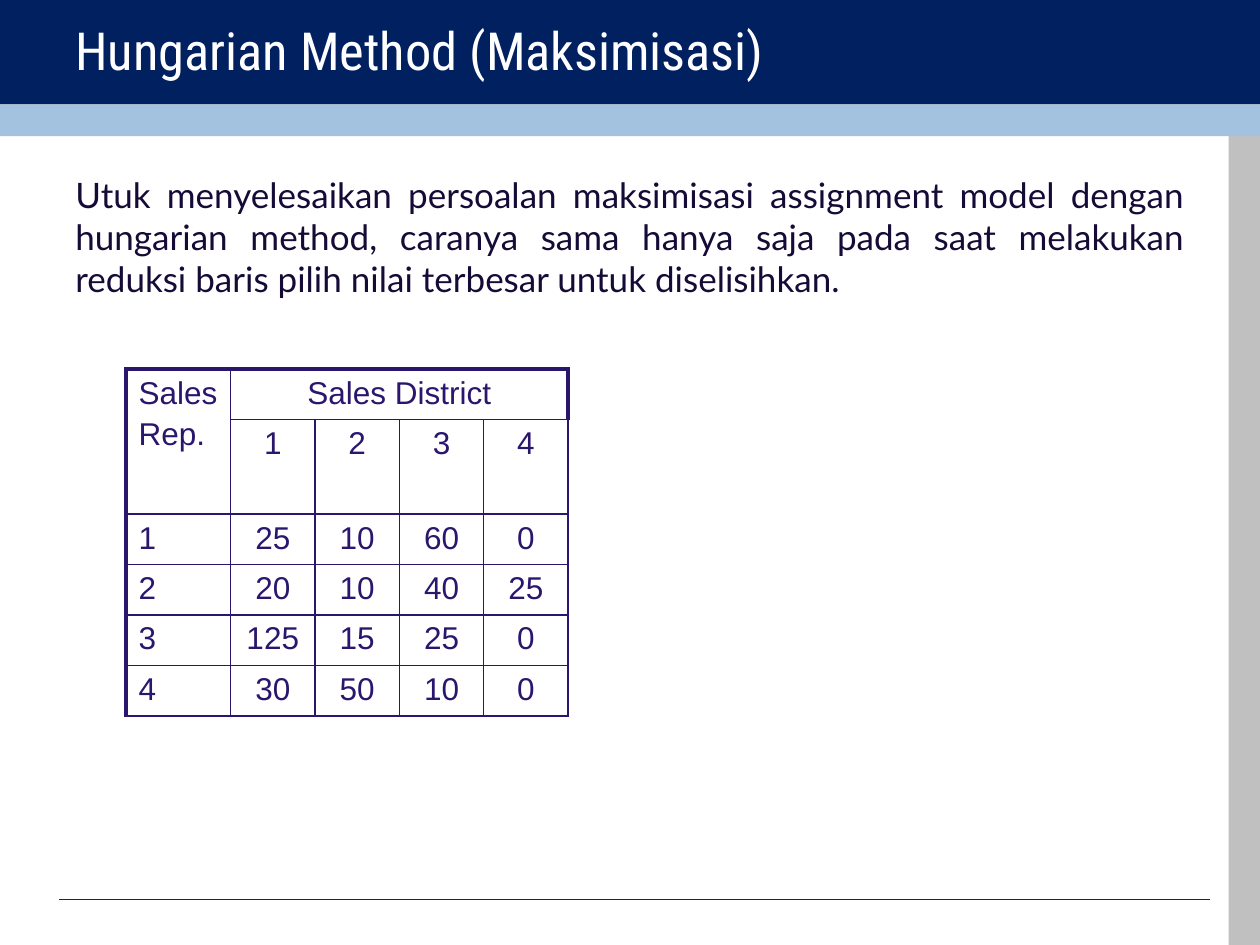
from dataclasses import dataclass

import pptx
import pptx.dml.color
import pptx.enum.shapes
import pptx.enum.text
import pptx.oxml.ns
import pptx.util
from lxml import etree

Inches, Pt = pptx.util.Inches, pptx.util.Pt
RGB = pptx.dml.color.RGBColor.from_string
Align = pptx.enum.text.PP_ALIGN
Anchor = pptx.enum.text.MSO_ANCHOR
qn = pptx.oxml.ns.qn

W, H = Inches(10), Inches(7.5)


@dataclass(frozen=True)
class Theme:
    navy: str = "002060"
    sky: str = "A3C2E0"
    gray: str = "C0C0C0"
    violet: str = "2B166E"
    ink: str = "160B37"
    white: str = "FFFFFF"
    title_pt: float = 30
    body_pt: float = 20
    table_pt: float = 18
    thin_pt: float = 1
    thick_pt: float = 2.25
    rule_pt: float = 0.75
    space_share: float = 0.2  # space before, as a share of the type size


@dataclass(frozen=True)
class Box:
    """A rectangle in inches."""
    x: float
    y: float
    w: float
    h: float

    def emu(self) -> tuple:
        return tuple(Inches(v) for v in (self.x, self.y, self.w, self.h))


@dataclass(frozen=True)
class Band:
    box: Box
    color: str


@dataclass(frozen=True)
class TextBlock:
    box: Box
    text: str
    font: str
    size: float
    color: str
    align: Align = Align.LEFT
    anchor: Anchor = Anchor.TOP


T = Theme()

BANDS = [
    Band(Box(9.75, 1.07, 0.25, 6.43), T.gray),
    Band(Box(0, 0, 10, 0.83), T.navy),
    Band(Box(0, 0.83, 10, 0.25), T.sky),
]
TEXTS = [
    TextBlock(Box(0.5, 0.08, 6.75, 0.62), "Hungarian Method (Maksimisasi)",
              "Roboto Condensed", T.title_pt, T.white, anchor=Anchor.MIDDLE),
    TextBlock(Box(0.5, 1.33, 9, 5.42),
              "Utuk menyelesaikan persoalan maksimisasi assignment model dengan "
              "hungarian method, caranya sama hanya saja pada saat melakukan "
              "reduksi baris pilih nilai terbesar untuk diselisihkan.",
              "Lato", T.body_pt, T.ink, Align.JUSTIFY),
]

TABLE_BOX = Box(1, 2.93, 3.5, 2.4)
COLS = [0.83] + [0.67] * 4
ROWS = [0.39] * 5 + [0.37]
DISTRICTS = [1, 2, 3, 4]
SALES = [
    [25, 10, 60, 0],
    [20, 10, 40, 25],
    [125, 15, 25, 0],
    [30, 50, 10, 0],
]


def add_band(s, band: Band) -> None:
    sp = s.shapes.add_shape(pptx.enum.shapes.MSO_SHAPE.RECTANGLE, *band.box.emu())
    sp.shadow.inherit = False
    sp.fill.solid()
    sp.fill.fore_color.rgb = RGB(band.color)
    sp.line.fill.background()


def add_rule(s, x1: float, x2: float, y: float) -> None:
    line = s.shapes.add_connector(pptx.enum.shapes.MSO_CONNECTOR.STRAIGHT,
                                  Inches(x1), Inches(y), Inches(x2), Inches(y))
    line.line.color.rgb = RGB(T.violet)
    line.line.width = Pt(T.rule_pt)
    etree.SubElement(line._element.spPr, qn("a:effectLst"))


def style(p, font: str, size: float, color: str, align: Align) -> None:
    p.alignment = align
    p.font.name, p.font.size = font, Pt(size)
    p.font.color.rgb = RGB(color)


def add_text(s, block: TextBlock) -> None:
    tf = s.shapes.add_textbox(*block.box.emu()).text_frame
    tf.word_wrap = True
    tf.vertical_anchor = block.anchor
    tf.text = block.text
    style(tf.paragraphs[0], block.font, block.size, block.color, block.align)


def set_borders(cell, **widths: float) -> None:
    """Draw the cell's sides L, R, T and B; sides not named are thin."""
    tc_pr = cell._tc.get_or_add_tcPr()
    for side in "LRTB":
        width = Pt(widths.get(side, T.thin_pt))
        ln = etree.SubElement(tc_pr, qn(f"a:ln{side}"), w=str(int(width)))
        fill = etree.SubElement(ln, qn("a:solidFill"))
        etree.SubElement(fill, qn("a:srgbClr"), val=T.violet)


def fill_cell(cell, text: str, align: Align) -> None:
    cell.text = text
    for p in cell.text_frame.paragraphs:
        style(p, "Arial", T.table_pt, T.violet, align)
        p.space_before = Pt(T.table_pt * T.space_share)


def add_sales_table(s) -> None:
    frame = s.shapes.add_table(len(ROWS), len(COLS), *TABLE_BOX.emu())
    table = frame.table
    table.first_row = table.horz_banding = False
    for col, width in zip(table.columns, COLS):
        col.width = Inches(width)
    for row, height in zip(table.rows, ROWS):
        row.height = Inches(height)

    # Thick outline on the left, the top and the right of the header
    last = len(COLS) - 1
    for r in range(len(ROWS)):
        for c in range(len(COLS)):
            cell = table.cell(r, c)
            thick = {"L": c == 0, "T": r == 0, "R": r == 0 and c > 0 and c in (1, last)}
            set_borders(cell, **{k: T.thick_pt for k, on in thick.items() if on})
            cell.fill.background()

    # Headings span two rows and four columns
    table.cell(0, 0).merge(table.cell(1, 0))
    table.cell(0, 1).merge(table.cell(0, last))
    fill_cell(table.cell(0, 0), "Sales\nRep.", Align.LEFT)
    fill_cell(table.cell(0, 1), "Sales District", Align.CENTER)

    for r, values in enumerate([DISTRICTS] + SALES, start=1):
        if r > 1:
            fill_cell(table.cell(r, 0), str(r - 1), Align.LEFT)
        for c, value in enumerate(values, start=1):
            fill_cell(table.cell(r, c), str(value), Align.CENTER)


def main() -> None:
    prs = pptx.Presentation()
    prs.slide_width, prs.slide_height = W, H
    s = prs.slides.add_slide(prs.slide_layouts[6])

    # Frame of the slide
    for band in BANDS:
        add_band(s, band)
    add_rule(s, 0.47, 9.6, 7.14)

    # Title, explanation and sales table
    for block in TEXTS:
        add_text(s, block)
    add_sales_table(s)
    prs.save("out.pptx")


if __name__ == "__main__":
    main()
